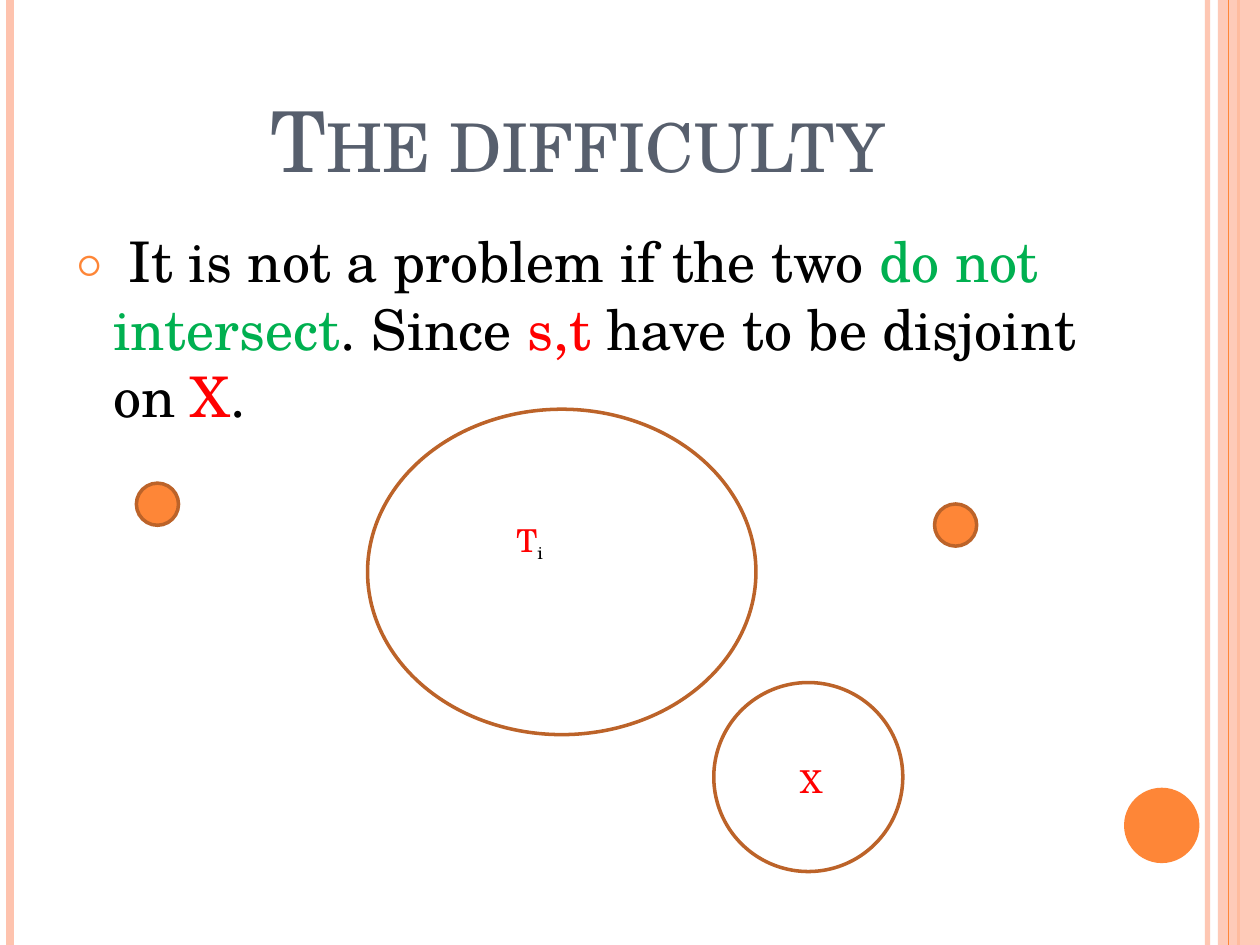
from lxml.etree import SubElement
from pptx import Presentation
from pptx.dml.color import RGBColor
from pptx.enum.shapes import MSO_CONNECTOR, MSO_SHAPE
from pptx.enum.text import MSO_ANCHOR, MSO_AUTO_SIZE, PP_ALIGN
from pptx.oxml.ns import qn
from pptx.util import Cm, Pt

COLORS = {
    "peach": "FEC3AE",
    "orange": "FE8637",
    "brown": "BC6329",
    "slate": "575F6D",
    "red": "FF0000",
    "green": "00B050",
    "black": "000000",
}
FONT = "TeX Gyre Schola"
SLIDE_WIDTH, SLIDE_HEIGHT = 25.4, 19.05


class SlideBuilder:
    """Holds the style and the current slide, and draws each kind of element."""

    def __init__(self, presentation):
        self.slide = presentation.slides.add_slide(presentation.slide_layouts[5])

    def paint(self, color_format, color, opacity=100):
        color_format.rgb = RGBColor.from_string(COLORS[color])
        if opacity < 100:
            srgb = color_format._color._xClr
            SubElement(srgb, qn("a:alpha"), val=str(opacity * 1000))

    def place(self, shape, left, top, width, height):
        shape.left, shape.top = Cm(left), Cm(top)
        shape.width, shape.height = Cm(width), Cm(height)

    def stripe(self, x, color, weight, opacity=100):
        stripe = self.slide.shapes.add_connector(
            MSO_CONNECTOR.STRAIGHT, Cm(x), Cm(0), Cm(x), Cm(SLIDE_HEIGHT))
        stripe.line.fill.solid()
        self.paint(stripe.line.fill.fore_color, color, opacity)
        stripe.line.width = Pt(weight)
        SubElement(stripe._element.spPr, qn("a:effectLst"))

    def shape(self, preset, left, top, width, height, fill=None, line=None, opacity=100):
        shape = self.slide.shapes.add_shape(
            preset, Cm(left), Cm(top), Cm(width), Cm(height))
        shape.shadow.inherit = False
        if fill:
            shape.fill.solid()
            self.paint(shape.fill.fore_color, fill, opacity)
        else:
            shape.fill.background()
        if line:
            self.paint(shape.line.color, line)
            shape.line.width = Pt(2)
        else:
            shape.line.fill.background()

    def run(self, paragraph, text, size, color, **attributes):
        run = paragraph.add_run()
        run.text = text
        run.font.name = FONT
        run.font.size = Pt(size)
        self.paint(run.font.color, color)
        for name, value in attributes.items():
            run.font._element.set(name, value)

    def title(self, text, left, top, width, height):
        title = self.slide.shapes.title
        self.place(title, left, top, width, height)
        title.text_frame.vertical_anchor = MSO_ANCHOR.BOTTOM
        paragraph = title.text_frame.paragraphs[0]
        paragraph.alignment = PP_ALIGN.CENTER
        self.run(paragraph, text, 48, "slate", cap="small")

    def text(self, left, top, width, height, size, runs, grow=True):
        box = self.slide.shapes.add_textbox(Cm(left), Cm(top), Cm(width), Cm(height))
        box.text_frame.word_wrap = True
        if grow:
            box.text_frame.auto_size = MSO_AUTO_SIZE.SHAPE_TO_FIT_TEXT
        paragraph = box.text_frame.paragraphs[0]
        for text, color, *baseline in runs:
            attributes = {"baseline": baseline[0]} if baseline else {}
            self.run(paragraph, text, size, color, **attributes)
        return paragraph

    def bullet(self, left, top, width, height, size, runs):
        paragraph = self.text(left, top, width, height, size, runs, grow=False)
        paragraph.space_before = Pt(6)
        properties = paragraph._p.get_or_add_pPr()
        indent = Cm(0.76)
        properties.set("marL", str(indent))
        properties.set("indent", str(-indent))
        bullet_color = SubElement(properties, qn("a:buClr"))
        SubElement(bullet_color, qn("a:srgbClr"), val=COLORS["orange"])
        SubElement(properties, qn("a:buSzPct"), val="70000")
        SubElement(properties, qn("a:buFont"), typeface=FONT)
        SubElement(properties, qn("a:buChar"), char="○")


def main():
    presentation = Presentation()
    presentation.slide_width = Cm(SLIDE_WIDTH)
    presentation.slide_height = Cm(SLIDE_HEIGHT)
    builder = SlideBuilder(presentation)

    builder.stripe(24.34, "peach", 3, opacity=93)
    builder.stripe(0.21, "peach", 4.5)
    builder.stripe(24.97, "orange", 1.5)
    builder.shape(MSO_SHAPE.RECTANGLE, 24.55, 0, 0.85, SLIDE_HEIGHT,
                  fill="peach", opacity=87)
    builder.stripe(24.77, "orange", 0.75)
    builder.shape(MSO_SHAPE.OVAL, 22.66, 15.88, 1.52, 1.52, fill="orange")

    builder.title("The difficulty", 1.27, 0.76, 20.75, 3.18)
    builder.bullet(1.27, 4.45, 20.75, 13.54, 32, [
        (" ", "red"),
        ("It is not a problem if the two ", "black"),
        ("do not intersect", "green"),
        (". Since ", "black"),
        ("s,t", "red"),
        (" have to be disjoint on ", "black"),
        ("X", "red"),
        (".", "black"),
    ])

    for left, top in [(2.75, 9.74), (18.84, 10.16)]:
        builder.shape(MSO_SHAPE.OVAL, left, top, 0.85, 0.85, fill="orange", line="brown")
    for left, top, width, height in [(7.41, 8.25, 7.83, 6.56), (14.39, 13.76, 3.81, 3.81)]:
        builder.shape(MSO_SHAPE.OVAL, left, top, width, height, line="brown")
    builder.text(15.88, 15.24, 4.87, 1.02, 18, [("X", "red")])
    builder.text(10.16, 10.37, 7.83, 1.02, 18, [("T", "red"), ("i", "black", "-25000")])

    presentation.save("out.pptx")


if __name__ == "__main__":
    main()
